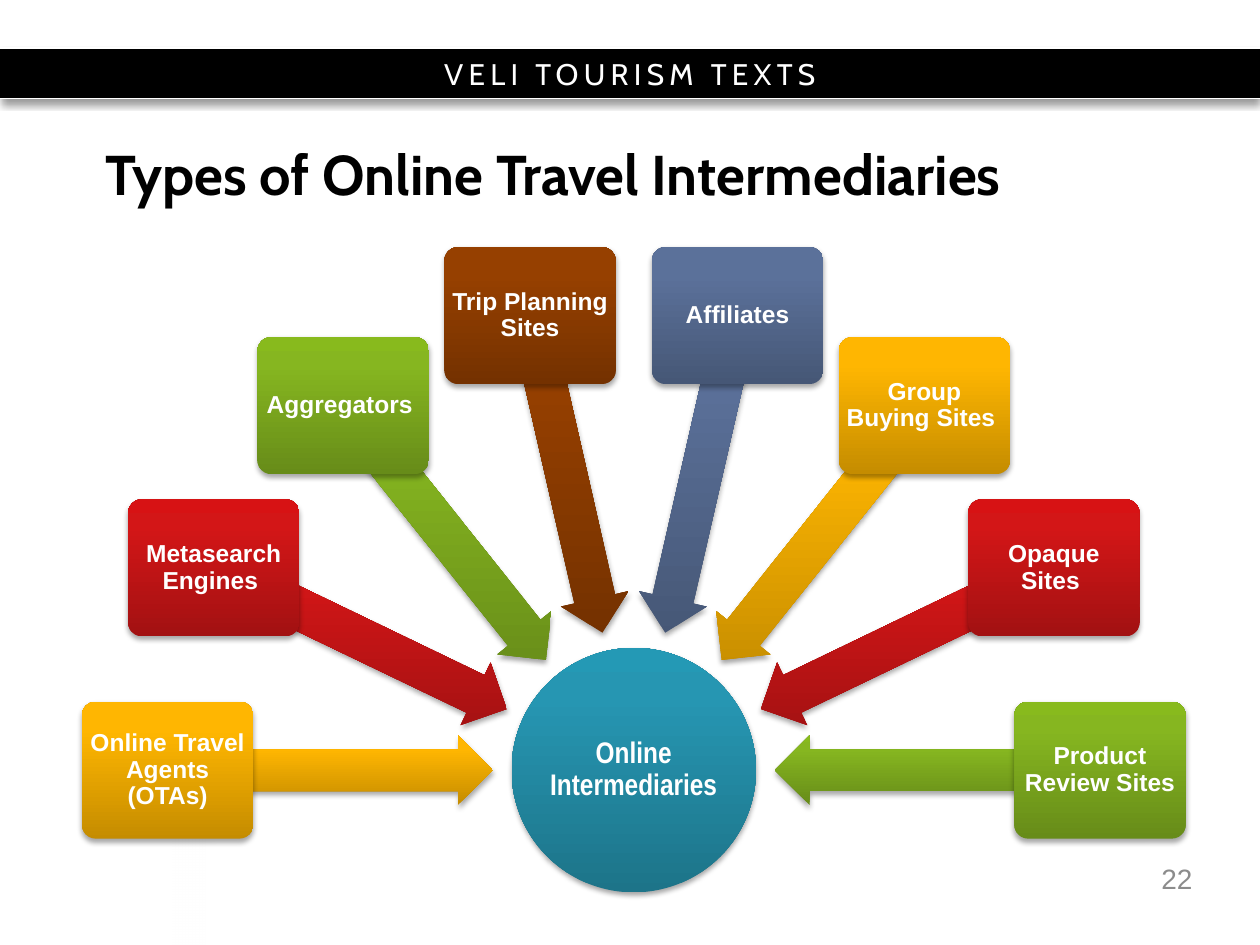
from dataclasses import dataclass
from math import cos, radians, sin

from pptx import Presentation
from pptx.dml.color import RGBColor
from pptx.enum.shapes import MSO_CONNECTOR as CONNECTOR, MSO_SHAPE as SHAPE
from pptx.enum.text import MSO_ANCHOR as ANCHOR, PP_ALIGN as ALIGN
from pptx.oxml import parse_xml
from pptx.oxml.ns import nsdecls, qn
from pptx.util import Pt


@dataclass(frozen=True)
class Theme:
    black: str = "000000"
    white: str = "FFFFFF"
    grey: str = "8C8C8C"
    # Gradients run from the bottom (0 %) to the top (100 %)
    teal: tuple = ("1D7489", "2696B2", "2499B5")
    amber: tuple = ("C58C00", "FFB601", "FFB602")
    red: tuple = ("A21112", "D31617", "D71214")
    green: tuple = ("678C19", "86B620", "88BA1D")
    brown: tuple = ("743100", "964000", "974100")
    slate: tuple = ("465776", "5B719A", "5A719C")
    heading_font: str = "Cabin"
    body_font: str = "Arial"
    hub_font: str = "Arial Narrow"
    title_size: int = 32
    banner_size: int = 17
    hub_size: int = 17
    number_size: int = 16
    box_size: int = 14


THEME = Theme()
WIDTH, HEIGHT = 720, 540

# Fan of boxes around the hub
CENTER_X, CENTER_Y = 362.2, 440.1
HUB_SIZE = 139.7
BOX_SIZE = (97.9, 78.3)
ARROW_SIZE = (186, 39.7)
BOX_RADIUS, ARROW_RADIUS = 266.4, 173.6

BOXES = [
    ("Online Travel Agents (OTAs)", THEME.amber),
    ("Metasearch Engines ", THEME.red),
    ("Aggregators ", THEME.green),
    ("Trip Planning Sites", THEME.brown),
    ("Affiliates", THEME.slate),
    ("Group Buying Sites ", THEME.amber),
    ("Opaque Sites ", THEME.red),
    ("Product Review Sites", THEME.green),
]


def write_text(shape, text, *, size, font=THEME.body_font, color=THEME.white,
               bold=False, align=ALIGN.CENTER, line_spacing=None,
               tracking=None, margins=(7.2, 3.6)):
    frame = shape.text_frame
    frame.word_wrap = True
    frame.vertical_anchor = ANCHOR.MIDDLE
    frame.margin_left = frame.margin_right = Pt(margins[0])
    frame.margin_top = frame.margin_bottom = Pt(margins[1])
    paragraph = frame.paragraphs[0]
    paragraph.alignment = align
    if line_spacing is not None:
        paragraph.line_spacing = line_spacing
    run = paragraph.add_run()
    run.text = text
    run.font.name = font
    run.font.size = Pt(size)
    run.font.bold = bold
    run.font.color.rgb = RGBColor.from_string(color)
    if tracking:
        run.font._element.set("spc", str(tracking * 100))


def add_text_box(slide, left, top, width, height, text, **text_format):
    box = slide.shapes.add_textbox(Pt(left), Pt(top), Pt(width), Pt(height))
    write_text(box, text, **text_format)


def add_plain_shape(slide, kind, left, top, width, height):
    shape = slide.shapes.add_shape(kind, Pt(left), Pt(top), Pt(width), Pt(height))
    shape.shadow.inherit = False
    shape.line.fill.background()
    return shape


def set_gradient(shape, stops, angle):
    """Fill with (position %, colour, opacity %) stops, fixed to the slide."""
    shape.fill.gradient()
    gradient = shape._element.spPr.find(qn("a:gradFill"))
    stop_xml = "".join(
        f'<a:gs pos="{position * 1000}"><a:srgbClr val="{color}">'
        f'<a:alpha val="{opacity * 1000}"/></a:srgbClr></a:gs>'
        for position, color, opacity in stops)
    gradient.getparent().replace(gradient, parse_xml(
        f'<a:gradFill {nsdecls("a")} rotWithShape="0"><a:gsLst>{stop_xml}</a:gsLst>'
        f'<a:lin ang="{angle * 60000}" scaled="0"/></a:gradFill>'))


def set_shadow(shape, opacity, blur, distance):
    shape._element.spPr.find(qn("a:effectLst")).append(parse_xml(
        f'<a:outerShdw {nsdecls("a")} blurRad="{Pt(blur)}" dist="{Pt(distance)}" '
        f'dir="5400000" rotWithShape="0"><a:srgbClr val="{THEME.black}">'
        f'<a:alpha val="{opacity * 1000}"/></a:srgbClr></a:outerShdw>'))


def add_glossy_shape(slide, kind, center, size, colors):
    left, top = center[0] - size[0] / 2, center[1] - size[1] / 2
    shape = add_plain_shape(slide, kind, left, top, *size)
    set_gradient(shape, [(position, color, 100)
                         for position, color in zip((0, 80, 100), colors)], 270)
    set_shadow(shape, 35, 3.1, 1.8)
    return shape


def add_rule(slide, y):
    rule = slide.shapes.add_connector(CONNECTOR.STRAIGHT, 0, Pt(y), Pt(WIDTH), Pt(y))
    rule.line.color.rgb = RGBColor.from_string(THEME.white)
    rule.line.width = Pt(0.75)
    rule._element.spPr.append(parse_xml(f'<a:effectLst {nsdecls("a")}/>'))


def add_banner(slide):
    top, height = 27.4, 29
    banner = add_plain_shape(slide, SHAPE.RECTANGLE, 0, top, WIDTH, height)
    banner.fill.solid()
    banner.fill.fore_color.rgb = RGBColor.from_string(THEME.black)
    set_shadow(banner, 40, 4, 3)
    write_text(banner, "VELI TOURISM TEXTS", size=THEME.banner_size,
               font=THEME.heading_font, tracking=3)
    for y in (top, top + height):
        add_rule(slide, y)


def add_fading_strip(slide):
    strip = add_plain_shape(slide, SHAPE.RECTANGLE, 98.6, 414, 18.7, HEIGHT - 414)
    set_gradient(strip, [(0, THEME.white, 0), (100, THEME.white, 100)], 0)


def add_hub(slide):
    hub = add_glossy_shape(slide, SHAPE.OVAL, (CENTER_X, CENTER_Y),
                           (HUB_SIZE, HUB_SIZE), THEME.teal)
    write_text(hub, "Online Intermediaries", size=THEME.hub_size,
               font=THEME.hub_font, bold=True, line_spacing=0.9, margins=(0.9, 0.9))


def point_on_fan(angle, radius):
    return (CENTER_X - radius * cos(radians(angle)),
            CENTER_Y - radius * sin(radians(angle)))


def add_spoke(slide, angle, text, colors):
    arrow = add_glossy_shape(slide, SHAPE.LEFT_ARROW,
                             point_on_fan(angle, ARROW_RADIUS), ARROW_SIZE, colors)
    arrow.adjustments[0], arrow.adjustments[1] = 0.6, 0.5
    arrow.rotation = (180 + angle) % 360
    box = add_glossy_shape(slide, SHAPE.ROUNDED_RECTANGLE,
                           point_on_fan(angle, BOX_RADIUS), BOX_SIZE, colors)
    box.adjustments[0] = 0.1
    write_text(box, text, size=THEME.box_size, bold=True, line_spacing=0.9,
               margins=(2.1, 2.1))


def main():
    presentation = Presentation()
    presentation.slide_width, presentation.slide_height = Pt(WIDTH), Pt(HEIGHT)
    slide = presentation.slides.add_slide(presentation.slide_layouts[6])

    # Frame of the slide
    add_banner(slide)
    add_fading_strip(slide)
    add_text_box(slide, 53.3, 85, 616.3, 34.6, "Types of Online Travel Intermediaries",
                 size=THEME.title_size, font=THEME.heading_font, color=THEME.black,
                 bold=True, align=ALIGN.LEFT, line_spacing=Pt(32))
    add_text_box(slide, 520.6, 487.4, 167.8, 28.8, "22", size=THEME.number_size,
                 color=THEME.grey, align=ALIGN.RIGHT)

    # Hub and the half circle of boxes pointing to it
    add_hub(slide)
    step = 180 / (len(BOXES) - 1)
    for index, (text, colors) in enumerate(BOXES):
        add_spoke(slide, index * step, text, colors)

    presentation.save("out.pptx")


if __name__ == "__main__":
    main()
